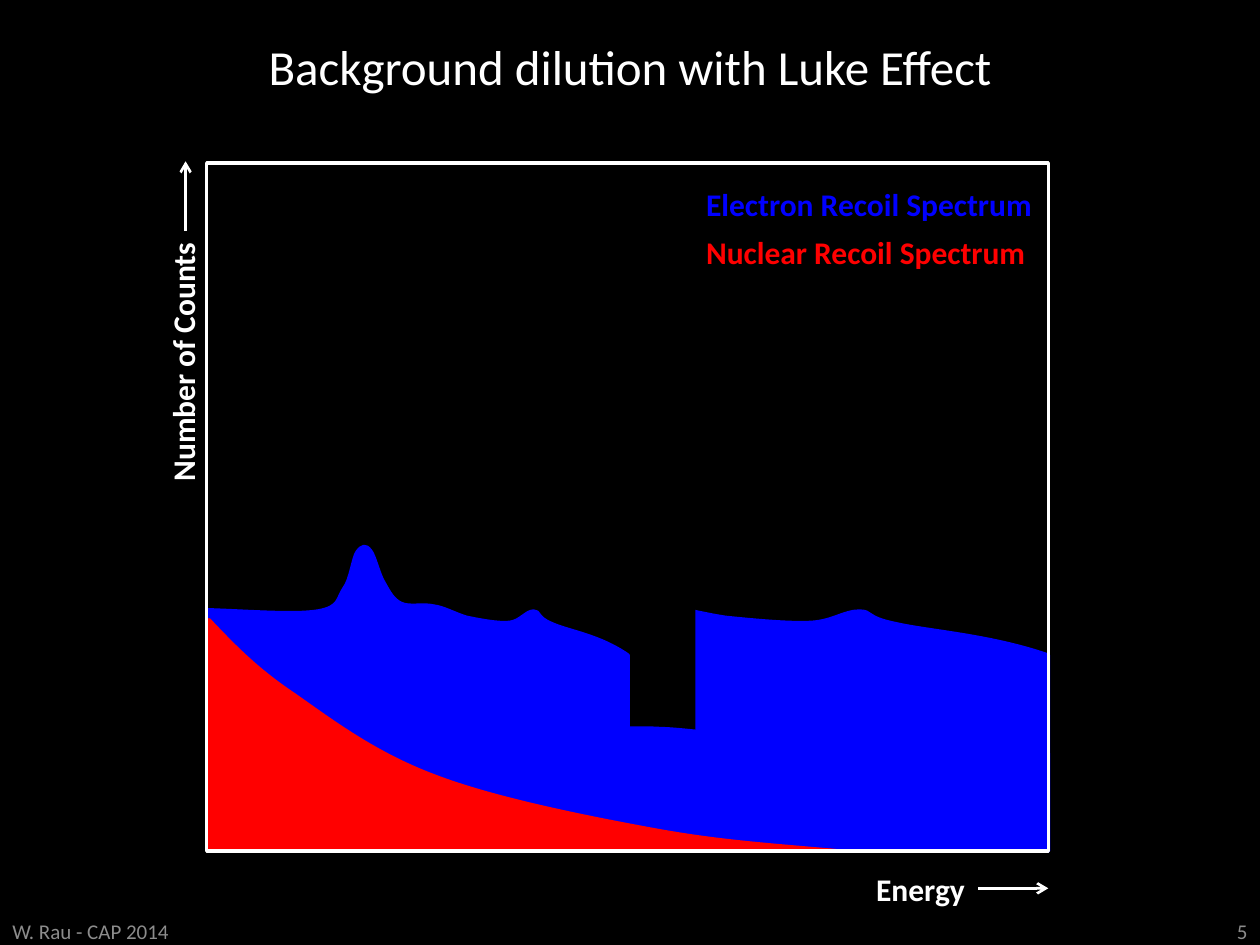
from dataclasses import dataclass

from lxml.etree import SubElement
from pptx import Presentation
from pptx.dml.color import RGBColor
from pptx.enum.shapes import MSO_CONNECTOR as Connector, MSO_SHAPE as Preset
from pptx.enum.text import MSO_ANCHOR as Anchor, MSO_AUTO_SIZE as AutoSize, PP_ALIGN as Align
from pptx.oxml.ns import qn
from pptx.shapes.base import BaseShape
from pptx.slide import Slide
from pptx.util import Inches, Pt

COLUMNS, ROWS = 100, 75
WIDTH, HEIGHT = Inches(10), Inches(7.5)
FLOOR = 67.55
COLOURS = {"black": "000000", "white": "FFFFFF", "electron": "0000FF",
           "nuclear": "FF0000", "footer": "8C8C8C"}

Point = tuple[float, float]

ELECTRON_CURVE: list[Point] = [
    (16.5, 48.4),
    (22.9, 48.5), (30.3, 48.8), (33.9, 48.5),
    (37.5, 48.2), (37.0, 47.5), (38.1, 46.7),
    (39.2, 46.0), (39.5, 44.3), (40.2, 43.8),
    (40.9, 43.3), (41.6, 43.2), (42.3, 43.7),
    (43.0, 44.1), (43.6, 45.6), (44.5, 46.3),
    (45.3, 47.0), (45.9, 47.6), (47.2, 47.9),
    (48.5, 48.2), (50.6, 47.9), (52.3, 48.1),
    (54.0, 48.2), (55.6, 48.7), (57.6, 49.0),
    (59.6, 49.2), (62.6, 49.5), (64.4, 49.4),
    (66.1, 49.3), (67.0, 48.5), (68.2, 48.5),
    (69.3, 48.5), (68.6, 49.0), (71.1, 49.5),
    (73.7, 50.1), (78.6, 50.4), (83.2, 52.0),
]
NUCLEAR_CURVE: list[Point] = [
    (16.6, 49.2),
    (18.4, 51.1), (20.3, 53.1), (23.3, 55.1),
    (26.3, 57.2), (29.7, 59.8), (34.5, 61.6),
    (39.2, 63.4), (46.2, 64.8), (51.6, 65.8),
    (57.0, 66.8), (60.6, 67.0), (66.7, 67.55),
]


@dataclass(frozen=True)
class Spectrum:
    curve: list[Point]
    colour: str
    stretch: float = 1
    height: float = 1


@dataclass(frozen=True)
class Label:
    text: str
    column: float
    row: float
    columns: float
    rows: float
    colour: str = "white"
    size: int = 18
    bold: bool = True
    align: Align = Align.LEFT
    rotation: int = 0
    footer: bool = False
    space_before: int = 0


@dataclass(frozen=True)
class Arrow:
    start: Point
    end: Point


ELECTRON_WIDE = Spectrum(ELECTRON_CURVE, "electron")
OVERLAYS = [
    Spectrum(ELECTRON_CURVE, "electron", stretch=0.5),
    Spectrum(ELECTRON_CURVE, "electron", height=0.5),
    Spectrum(NUCLEAR_CURVE, "nuclear"),
    Spectrum(NUCLEAR_CURVE, "nuclear", height=0.75),
    Spectrum(NUCLEAR_CURVE, "nuclear", stretch=0.67),
]
LABELS = [
    Label("Background dilution with Luke Effect", 19.95, 2.4, 60.1, 5.7,
          size=28, bold=False, align=Align.CENTER, space_before=6),
    Label("Electron Recoil Spectrum", 55.05, 14.2, 28.1, 4, "electron"),
    Label("Energy", 68.55, 68.55, 9.1, 4),
    Label("Number of Counts", 3.95, 26.65, 21.1, 4, rotation=270),
    Label("Nuclear Recoil Spectrum", 55.05, 18, 27.5, 4, "nuclear"),
    Label("5", 76.7, 72.85, 23.3, 2.1, "footer", 12, False, Align.RIGHT, footer=True),
    Label("W. Rau - CAP 2014", 0, 72.85, 31.7, 2.1, "footer", 12, False, footer=True),
]
ARROWS = [Arrow((77.65, 70.5), (83.2, 70.5)), Arrow((14.73, 18.35), (14.73, 12.8))]


def across(columns: float) -> int:
    """Return a number of grid columns as a slide length."""
    return round(WIDTH * columns / COLUMNS)


def down(rows: float) -> int:
    """Return a number of grid rows as a slide length."""
    return round(HEIGHT * rows / ROWS)


def colour_of(name: str) -> RGBColor:
    """Look up a named colour."""
    return RGBColor.from_string(COLOURS[name])


def paint(shape: BaseShape, fill: str | None = None, line: str | None = None) -> None:
    """Set fill and outline, where None means empty."""
    shape.shadow.inherit = False
    if fill:
        shape.fill.solid()
        shape.fill.fore_color.rgb = colour_of(fill)
    else:
        shape.fill.background()
    if line:
        shape.line.color.rgb = colour_of(line)
        shape.line.width = Pt(2)
    else:
        shape.line.fill.background()


def bend(shape: BaseShape, segments: int) -> None:
    """Turn the first segments, three at a time, into cubic curves."""
    lines = list(shape._element.iter(qn("a:lnTo")))[:segments]
    for first in range(0, segments, 3):
        curve = lines[first]
        cubic = curve.makeelement(qn("a:cubicBezTo"))
        curve.addprevious(cubic)
        for line in lines[first:first + 3]:
            cubic.append(line[0])
            line.getparent().remove(line)


def draw_spectrum(page: Slide, spectrum: Spectrum) -> None:
    """Draw the filled area between a scaled curve and the floor."""
    left = spectrum.curve[0][0]
    knots = [(left + (x - left) * spectrum.stretch, FLOOR - (FLOOR - y) * spectrum.height)
             for x, y in spectrum.curve]
    corners = [(knots[-1][0], FLOOR), (left, FLOOR)]
    points = [(across(x), down(y)) for x, y in knots + corners]
    builder = page.shapes.build_freeform(*points[0])
    builder.add_line_segments(points[1:], close=True)
    area = builder.convert_to_shape()
    bend(area, len(knots) - 1)
    paint(area, spectrum.colour, spectrum.colour)


def draw_rectangle(page: Slide, column: float, row: float, columns: float, rows: float,
                   fill: str | None = None, line: str | None = None) -> None:
    """Draw a rectangle on the grid."""
    box = page.shapes.add_shape(Preset.RECTANGLE, across(column), down(row),
                                across(columns), down(rows))
    paint(box, fill, line)


def draw_label(page: Slide, label: Label) -> None:
    """Write one line of text."""
    box = page.shapes.add_textbox(across(label.column), down(label.row),
                                  across(label.columns), down(label.rows))
    box.rotation = label.rotation
    frame = box.text_frame
    frame.word_wrap = label.footer
    frame.auto_size = AutoSize.NONE if label.footer else AutoSize.SHAPE_TO_FIT_TEXT
    frame.vertical_anchor = Anchor.MIDDLE if label.footer else Anchor.TOP
    para = frame.paragraphs[0]
    para.alignment = label.align
    para.space_before = Pt(label.space_before)
    span = para.add_run()
    span.text = label.text
    span.font.name = "Calibri"
    span.font.size = Pt(label.size)
    span.font.bold = label.bold
    span.font.color.rgb = colour_of(label.colour)


def draw_arrow(page: Slide, arrow: Arrow) -> None:
    """Draw an axis arrow with an open head."""
    (x1, y1), (x2, y2) = arrow.start, arrow.end
    line = page.shapes.add_connector(Connector.STRAIGHT, across(x1), down(y1),
                                     across(x2), down(y2))
    line.line.color.rgb = colour_of("white")
    line.line.width = Pt(1.5)
    SubElement(line.line._get_or_add_ln(), qn("a:tailEnd"), type="arrow")
    SubElement(line._element.spPr, qn("a:effectLst"))


def main() -> None:
    """Build the slide and save it."""
    deck = Presentation()
    deck.slide_width, deck.slide_height = WIDTH, HEIGHT
    page = deck.slides.add_slide(deck.slide_layouts[6])
    page.background.fill.solid()
    page.background.fill.fore_color.rgb = colour_of("black")
    draw_spectrum(page, ELECTRON_WIDE)
    draw_rectangle(page, 17, 39, 38.2, 28.4, fill="black")
    for spectrum in OVERLAYS:
        draw_spectrum(page, spectrum)
    for label in LABELS:
        draw_label(page, label)
    for arrow in ARROWS:
        draw_arrow(page, arrow)
    draw_rectangle(page, 16.4, 12.92, 66.8, 54.63, line="white")
    deck.save("out.pptx")


if __name__ == "__main__":
    main()
